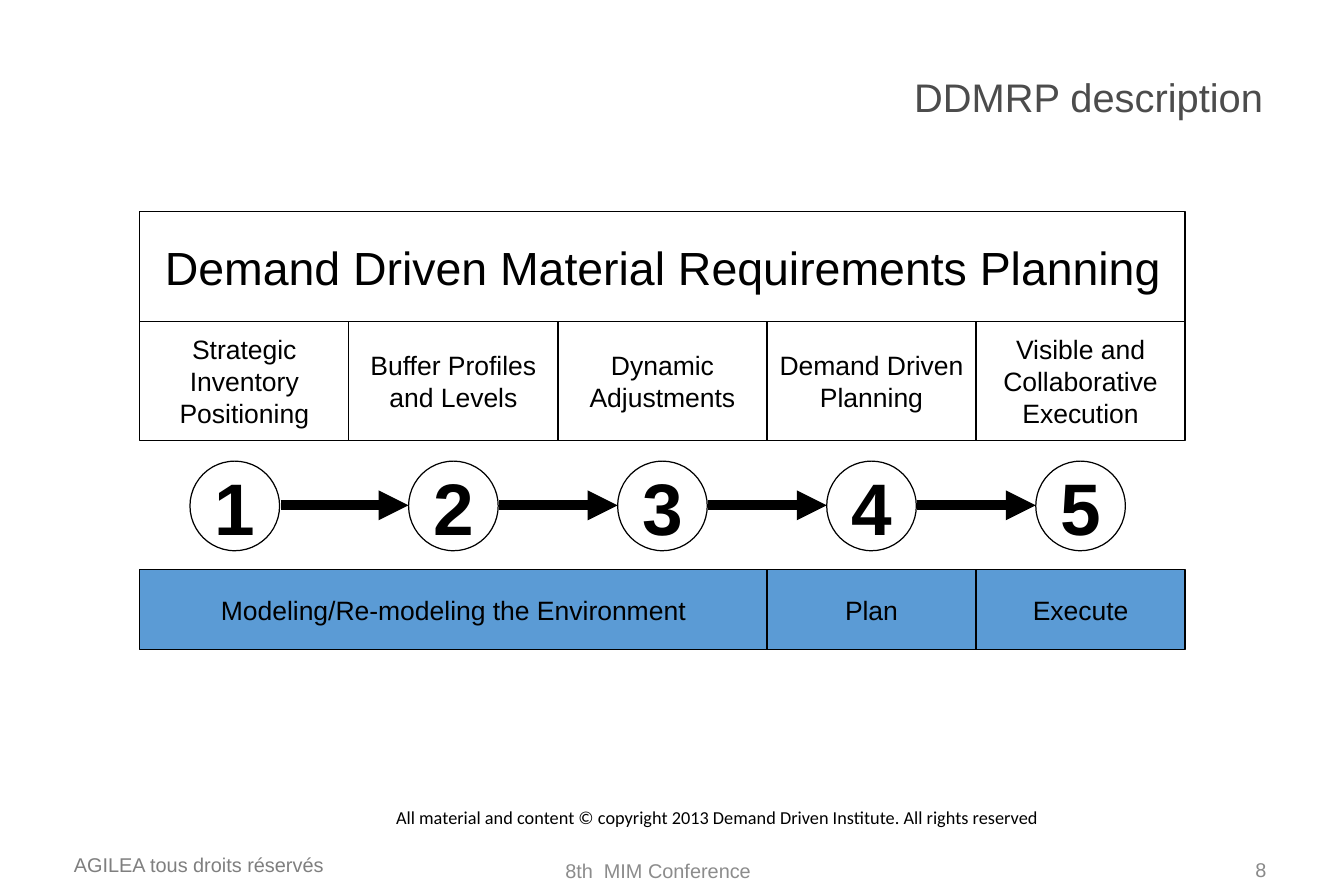
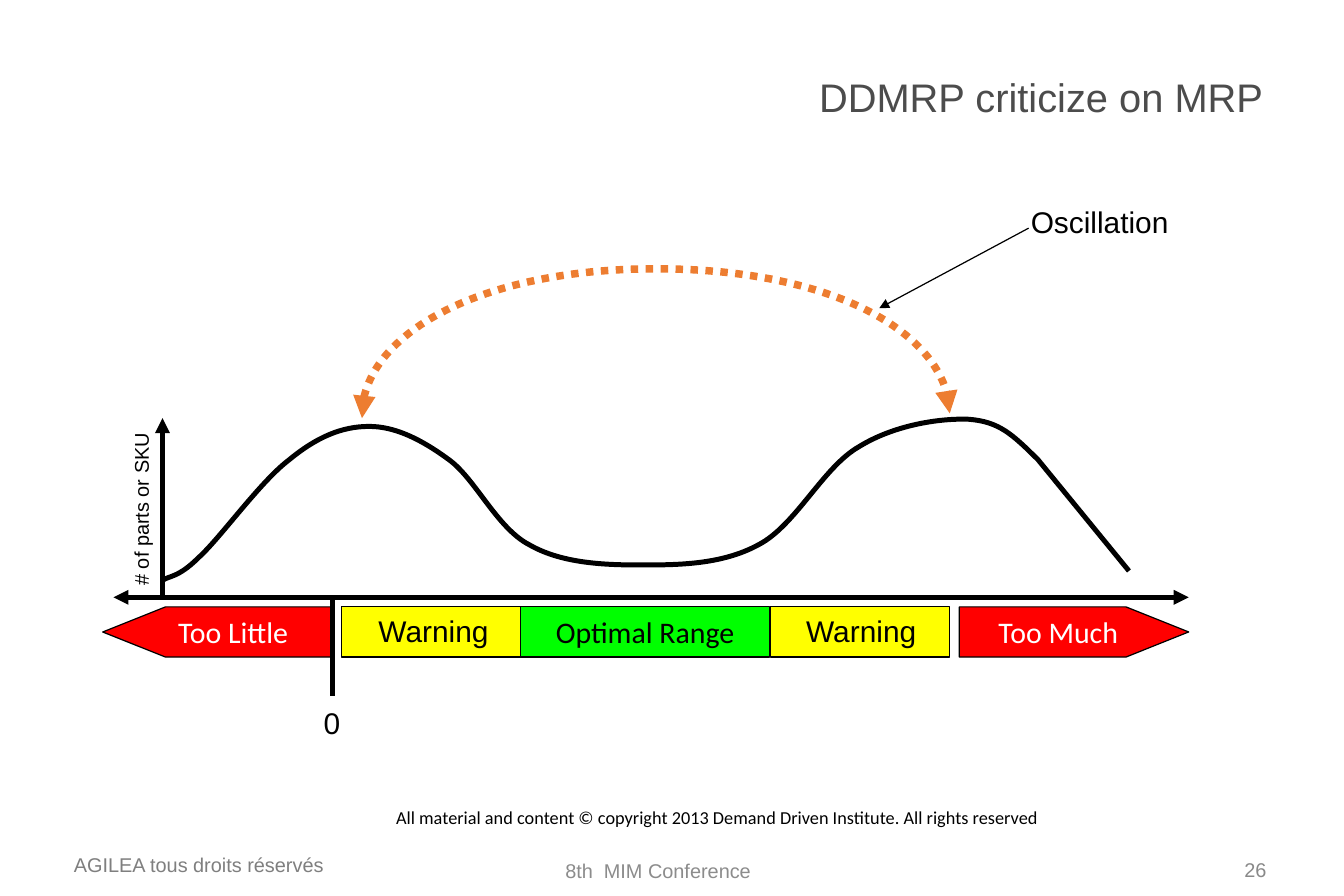
"""Build two slides on demand driven material requirements planning."""
import lxml.etree
import pptx
import pptx.dml.color
import pptx.enum.dml
import pptx.enum.shapes
import pptx.enum.text
import pptx.oxml.ns
import pptx.util

Inches = pptx.util.Inches
Pt = pptx.util.Pt
hue = pptx.dml.color.RGBColor.from_string
qn = pptx.oxml.ns.qn
Shape = pptx.enum.shapes.MSO_SHAPE
Align = pptx.enum.text.PP_ALIGN
Anchor = pptx.enum.text.MSO_ANCHOR
BLACK, WHITE, BLUE = "000000", "FFFFFF", "5B9BD5"
RED, YELLOW, GREEN, ORANGE = "FF0000", "FFFF00", "00FF00", "ED7D31"


def box(slide, place, text, size=18, kind=None, fill=None, color=BLACK,
        font="Arial", align=Align.CENTER, wrap=True, grow=False):
    """Add a text box, or an outlined shape when a kind is given."""
    area = [Inches(v) for v in place]
    if kind is None:
        item = slide.shapes.add_textbox(*area)
    else:
        item = slide.shapes.add_shape(kind, *area)
        item.shadow.inherit = False
        item.line.color.rgb = hue(BLACK)
        item.line.width = Pt(0.75)
        if fill:
            item.fill.solid()
            item.fill.fore_color.rgb = hue(fill)
        else:
            item.fill.background()
    if not text:
        return item
    frame = item.text_frame
    frame.word_wrap = wrap
    frame.vertical_anchor = Anchor.TOP if grow else Anchor.MIDDLE
    if grow:
        frame.auto_size = pptx.enum.text.MSO_AUTO_SIZE.SHAPE_TO_FIT_TEXT
    para = frame.paragraphs[0]
    para.text = text
    para.alignment = align
    para.font.name = font
    para.font.size = Pt(size)
    para.font.color.rgb = hue(color)
    return item


def ink(item, width, ends=(), color=BLACK, dash=None):
    """Style a stroke and give it arrowheads."""
    item.line.color.rgb = hue(color)
    item.line.width = Pt(width)
    if dash:
        item.line.dash_style = dash
    props = item._element.spPr
    for end in ends:
        lxml.etree.SubElement(props.find(qn("a:ln")), qn("a:" + end), type="triangle")
    lxml.etree.SubElement(props, qn("a:effectLst"))


deck = pptx.Presentation()
deck.slide_width = Inches(11.25)
deck.slide_height = Inches(7.5)
straight = pptx.enum.shapes.MSO_CONNECTOR.STRAIGHT

for title, number in (("DDMRP description", "8"), ("DDMRP criticize on MRP", "26")):
    slide = deck.slides.add_slide(deck.slide_layouts[6])
    box(slide, (0.52, 7.09, 2.32, 0.3), "AGILEA tous droits réservés", 12,
        color="7F7F7F", align=Align.LEFT, grow=True)
    head = box(slide, (5.28, 0.5, 5.39, 0.67), title, 24, color="4C4C4C", align=Align.RIGHT)
    head.text_frame.paragraphs[0].line_spacing = 0.9
    box(slide, (8.17, 7.08, 2.53, 0.4), number, 12, color="898989", align=Align.RIGHT)
    box(slide, (2.73, 6.7, 6.55, 0.29),
        "All material and content © copyright 2013 Demand Driven Institute. All rights reserved",
        11, font="Calibri", grow=True)
    box(slide, (3.61, 7.09, 3.8, 0.4), "8th  MIM Conference", 12, color="8C8C8C")

plan, chart = deck.slides
left, step, ring = 1.17, 1.75, 0.75
box(plan, (left, 1.77, 5 * step, 0.92), "Demand Driven Material Requirements Planning", 28,
    Shape.RECTANGLE, wrap=False)
parts = ("Strategic Inventory Positioning", "Buffer Profiles and Levels", "Dynamic Adjustments",
         "Demand Driven Planning", "Visible and Collaborative Execution")
edge = None
for i, part in enumerate(parts):
    x = left + i * step
    box(plan, (x, 2.69, step, 1), part, 16, Shape.RECTANGLE)
    spot = x + (0.5 if i else 0.42)
    disc = box(plan, (spot, 3.86, ring, ring), str(i + 1), 44, Shape.OVAL, wrap=False)
    disc.text_frame.paragraphs[0].font.bold = True
    if edge:
        arrow = plan.shapes.add_connector(straight, Inches(edge), Inches(4.23),
                                          Inches(spot), Inches(4.23))
        ink(arrow, 6, ["tailEnd"])
    edge = spot + ring + 0.01
for first, span, phase in ((0, 3, "Modeling/Re-modeling the Environment"),
                           (3, 1, "Plan"), (4, 1, "Execute")):
    box(plan, (left + first * step, 4.77, span * step, 0.67), phase, 16,
        Shape.RECTANGLE, BLUE, wrap=False)

for x, width, zone, kind, fill, color in (
        (2.86, 1.5, "", Shape.RECTANGLE, YELLOW, BLACK),
        (8.03, 1.92, "Too Much", Shape.PENTAGON, RED, WHITE),
        (0.86, 1.92, "Too Little", Shape.PENTAGON, RED, WHITE),
        (4.36, 2.08, "Optimal Range", Shape.RECTANGLE, GREEN, BLACK),
        (6.45, 1.5, "", Shape.RECTANGLE, YELLOW, BLACK)):
    item = box(chart, (x, 5.08, width, 0.42), zone, 18, kind, fill, color, "Calibri", wrap=False)
    if kind == Shape.PENTAGON:
        item.adjustments[0] = 1.25
    if zone == "Too Little":
        item.rotation = 180
        item.text_frame._txBody.bodyPr.set("rot", "10800000")

wave = ((1.36, 4.86), (1.41, 4.82), (1.49, 4.84), (1.66, 4.67),
        (1.84, 4.51), (2.18, 4.03), (2.42, 3.85), (2.65, 3.66), (2.86, 3.57), (3.09, 3.57),
        (3.31, 3.57), (3.53, 3.68), (3.76, 3.85), (3.98, 4.01), (4.16, 4.42), (4.43, 4.56),
        (4.69, 4.71), (5.03, 4.73), (5.35, 4.73), (5.67, 4.73), (6.04, 4.73), (6.35, 4.56),
        (6.66, 4.4), (6.89, 3.91), (7.19, 3.74), (7.48, 3.56), (7.86, 3.5), (8.11, 3.51),
        (8.36, 3.53), (8.47, 3.63), (8.69, 3.85), (9.45, 4.78))
swing = ((3.03, 3.5), (3.03, 3.49), (3.03, 3.48), (3.03, 3.47),
         (3.03, 2.79), (4.13, 2.25), (5.49, 2.25), (6.85, 2.25), (7.95, 2.79), (7.95, 3.46))
both = ("headEnd", "tailEnd")
dots = pptx.enum.dml.MSO_LINE.ROUND_DOT
for knots, width, ends, color, dash in ((wave, 3, (), BLACK, None),
                                        (swing, 4.5, both, ORANGE, dots)):
    start, *rest = [(Inches(x), Inches(y)) for x, y in knots]
    pen = chart.shapes.build_freeform(*start)
    pen.add_line_segments(rest, close=False)
    curve = pen.convert_to_shape()
    legs = list(curve._element.iter(qn("a:lnTo")))
    for i in range(0, len(legs) - 2, 3):
        bend = lxml.etree.Element(qn("a:cubicBezTo"))
        legs[i].addprevious(bend)
        for leg in legs[i:i + 3]:
            bend.append(leg[0])
            leg.getparent().remove(leg)
    curve.fill.background()
    ink(curve, width, ends, color, dash)

for ax, ay, bx, by, width, ends in ((0.95, 5, 9.95, 5, 3, both),
                                    (1.36, 5, 1.36, 3.5, 3, ["tailEnd"]),
                                    (2.78, 5, 2.78, 5.83, 3, ()),
                                    (8.61, 1.91, 7.36, 2.58, 0.75, ["tailEnd"])):
    rule = chart.shapes.add_connector(straight, Inches(ax), Inches(ay), Inches(bx), Inches(by))
    ink(rule, width, ends)

for place, label, size, turn in (((0.44, 4.11, 1.48, 0.3), "# of parts or SKU", 12, 270),
                                 ((3.07, 5.08, 1.13, 0.4), "Warning", 18, 0),
                                 ((6.65, 5.08, 1.13, 0.4), "Warning", 18, 0),
                                 ((8.53, 1.66, 1.35, 0.4), "Oscillation", 18, 0),
                                 ((2.61, 5.85, 0.34, 0.4), "0", 18, 0)):
    note = box(chart, place, label, size, align=Align.LEFT, wrap=False, grow=True)
    note.rotation = turn

deck.save("out.pptx")
